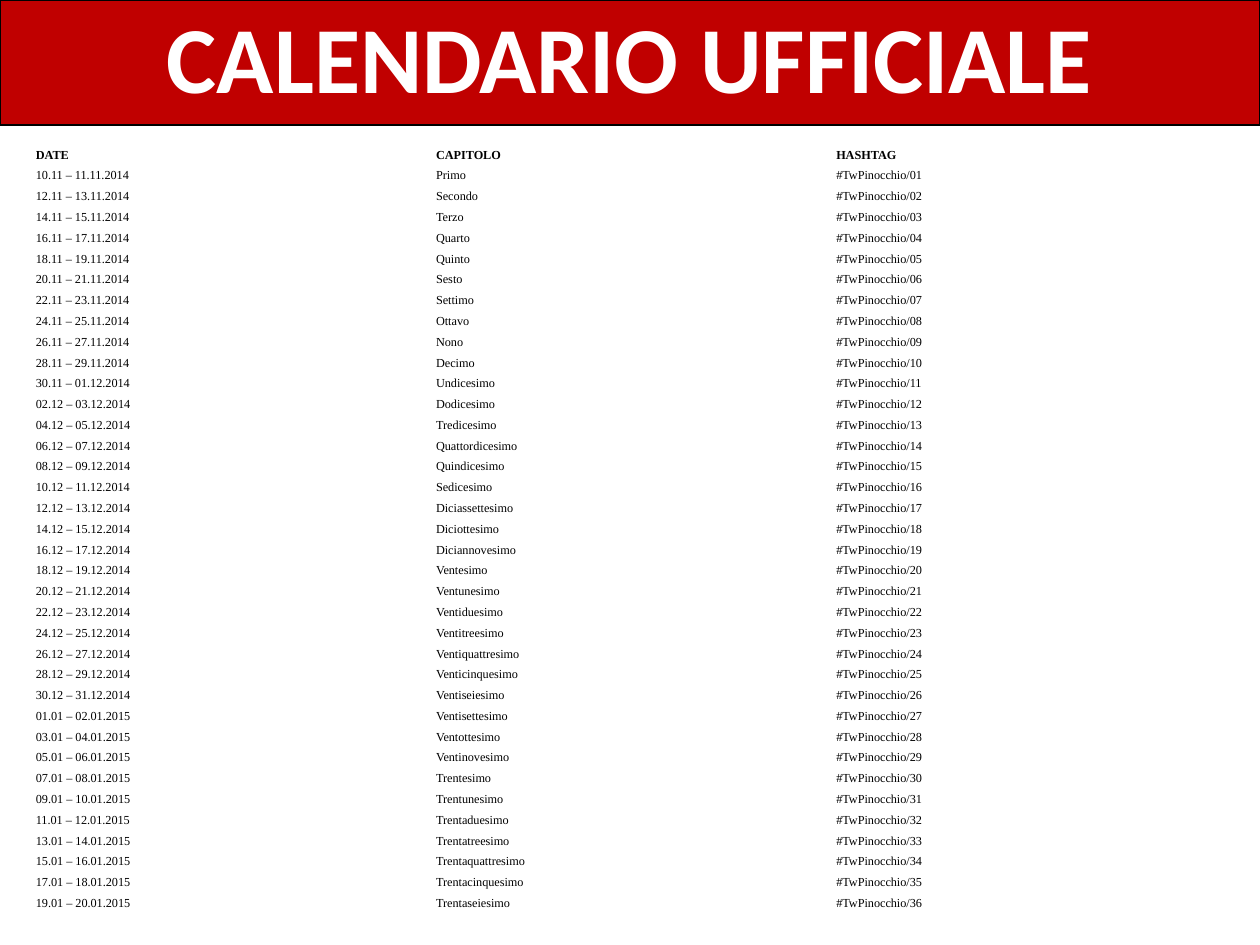
from pptx import Presentation
from pptx.dml.color import RGBColor
from pptx.enum.text import MSO_ANCHOR, MSO_AUTO_SIZE, PP_ALIGN
from pptx.util import Pt

TITLE = "CALENDARIO UFFICIALE"
HEADERS = ("DATE", "CAPITOLO", "HASHTAG")
# month, year, first day, last day of the reading period
MONTHS = [(11, 2014, 10, 30), (12, 2014, 1, 31), (1, 2015, 1, 20)]
CHAPTERS = [
    "Primo", "Secondo", "Terzo", "Quarto", "Quinto", "Sesto",
    "Settimo", "Ottavo", "Nono", "Decimo", "Undicesimo", "Dodicesimo",
    "Tredicesimo", "Quattordicesimo", "Quindicesimo", "Sedicesimo",
    "Diciassettesimo", "Diciottesimo", "Diciannovesimo", "Ventesimo",
    "Ventunesimo", "Ventiduesimo", "Ventitreesimo", "Ventiquattresimo",
    "Venticinquesimo", "Ventiseiesimo", "Ventisettesimo", "Ventottesimo",
    "Ventinovesimo", "Trentesimo", "Trentunesimo", "Trentaduesimo",
    "Trentatreesimo", "Trentaquattresimo", "Trentacinquesimo", "Trentaseiesimo",
]

SLIDE_WIDTH, SLIDE_HEIGHT = 720, 540
BANNER_HEIGHT = 71.5
TABLE_LEFT, TABLE_TOP = 20, 82.7
COLUMN_WIDTH, ROW_HEIGHT = 228.7, 11.88
CELL_MARGIN = 0.5


def color(hex_string):
    return RGBColor.from_string(hex_string)


def add_run(paragraph, text, font_name, size, hex_color, bold):
    run = paragraph.add_run()
    run.text = text
    run.font.name = font_name
    run.font.size = Pt(size)
    run.font.bold = bold
    run.font.color.rgb = color(hex_color)


def calendar_rows():
    """Pair consecutive days, one pair for each chapter."""
    days = [(f"{day:02}.{month:02}", year)
            for month, year, first, last in MONTHS
            for day in range(first, last + 1)]
    rows = [HEADERS]
    for number, chapter in enumerate(CHAPTERS, 1):
        (start, _), (end, year) = days[2 * number - 2:2 * number]
        rows.append((f"{start} – {end}.{year}", chapter, f"#TwPinocchio/{number:02}"))
    return rows


def format_banner(banner):
    banner.left, banner.top = Pt(0), Pt(0)
    banner.width, banner.height = Pt(SLIDE_WIDTH), Pt(BANNER_HEIGHT)
    banner.fill.solid()
    banner.fill.fore_color.rgb = color("C00000")
    banner.line.color.rgb = color("000000")
    banner.line.width = Pt(0.75)
    frame = banner.text_frame
    frame.auto_size = MSO_AUTO_SIZE.NONE
    frame.vertical_anchor = MSO_ANCHOR.MIDDLE
    paragraph = frame.paragraphs[0]
    paragraph.alignment = PP_ALIGN.CENTER
    paragraph.line_spacing = 0.9
    add_run(paragraph, TITLE, "Calibri", 54, "FFFFFF", True)


def add_calendar(slide, rows):
    columns = len(HEADERS)
    table = slide.shapes.add_table(
        len(rows), columns, Pt(TABLE_LEFT), Pt(TABLE_TOP),
        Pt(COLUMN_WIDTH * columns), Pt(ROW_HEIGHT * len(rows))).table
    table.first_row = table.horz_banding = False
    for column in table.columns:
        column.width = Pt(COLUMN_WIDTH)
    for index, texts in enumerate(rows):
        table.rows[index].height = Pt(ROW_HEIGHT)
        for cell, text in zip(table.rows[index].cells, texts):
            cell.fill.background()
            cell.vertical_anchor = MSO_ANCHOR.MIDDLE
            cell.margin_left = cell.margin_right = Pt(CELL_MARGIN)
            cell.margin_top = cell.margin_bottom = Pt(CELL_MARGIN)
            add_run(cell.text_frame.paragraphs[0], text,
                    "Times New Roman", 7, "000000", index == 0)


def main():
    presentation = Presentation()
    presentation.slide_width, presentation.slide_height = Pt(SLIDE_WIDTH), Pt(SLIDE_HEIGHT)
    slide = presentation.slides.add_slide(presentation.slide_layouts[5])
    format_banner(slide.shapes.title)
    add_calendar(slide, calendar_rows())
    presentation.save("out.pptx")


if __name__ == "__main__":
    main()
